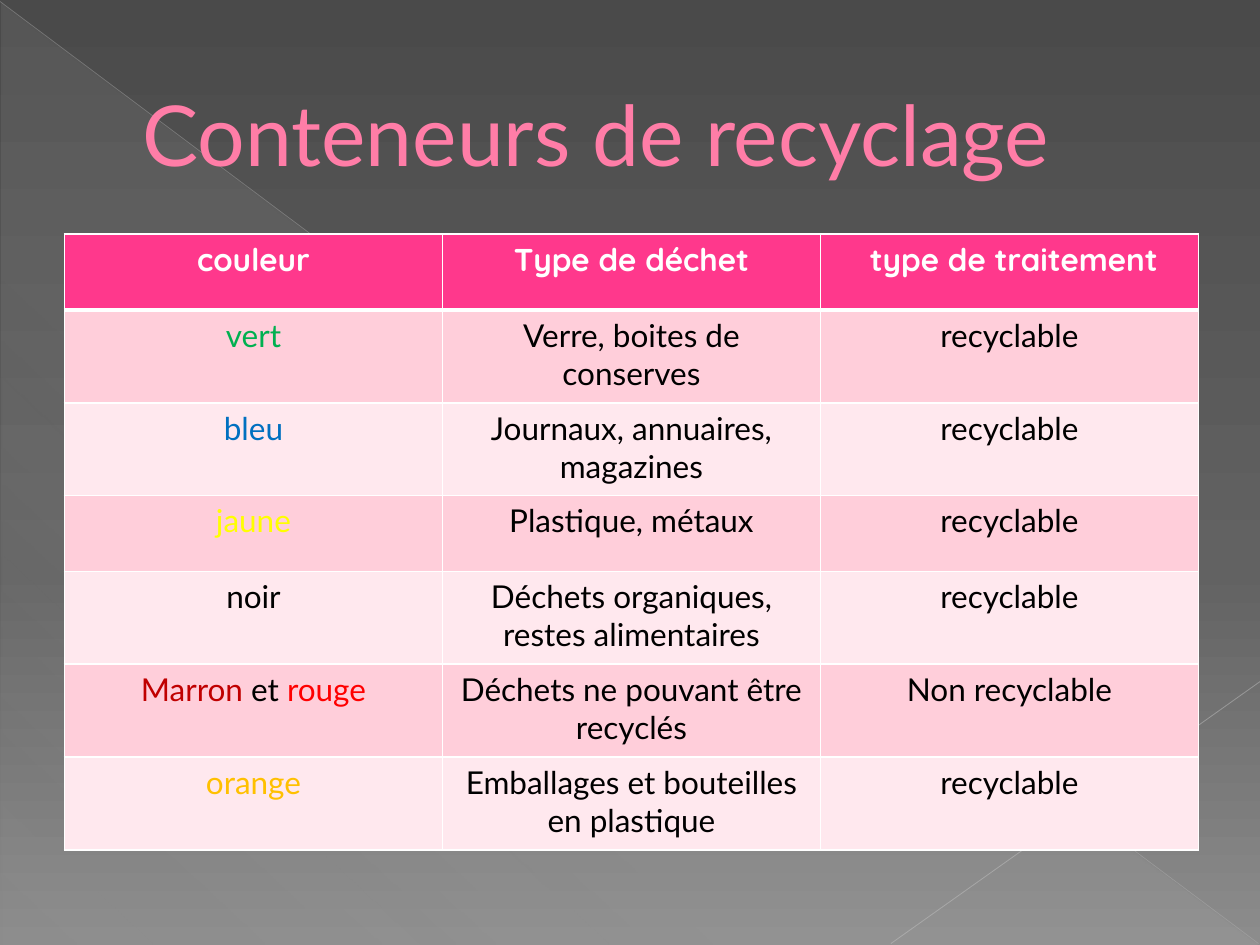
from dataclasses import dataclass

from lxml import etree
from pptx import Presentation
from pptx.dml.color import RGBColor
from pptx.enum import shapes, text
from pptx.oxml import parse_xml
from pptx.oxml.ns import nsdecls, qn
from pptx.util import Cm, Pt

COLORS = {
    "title": "FF7DA7", "title_edge": "B12761", "white": "FFFFFF",
    "black": "000000", "header": "FF388C", "band_dark": "FFCEDA",
    "band_light": "FFE8EE", "green": "00B050", "blue": "0070C0",
    "yellow": "FFFF00", "brown": "C00000", "red": "FF0000",
    "orange": "FFC000", "sky": "4A4A4A", "middle": "626262",
    "ground": "8C8C8C", "veil": "D2D2D2", "long_ray": "BFBFBF",
    "short_ray": "C6C6C6",
}


@dataclass
class Stop:
    position: int
    color: str
    opacity: int = 100


@dataclass
class Ray:
    start: tuple[float, float]
    end: tuple[float, float]
    color: str
    width: float
    opacity: int


@dataclass
class Part:
    words: str
    color: str = "black"


@dataclass
class Container:
    names: list[Part]
    waste: str
    treatment: str = "recyclable"
    height: float = 1.87


HEADINGS = ["couleur", "Type de déchet", " type de traitement"]
HEADER_HEIGHT = 1.53
CONTAINERS = [
    Container([Part("vert", "green")], "Verre, boites de conserves"),
    Container([Part("bleu", "blue")], "Journaux, annuaires, magazines"),
    Container([Part("jaune", "yellow")], "Plastique, métaux", height=1.53),
    Container([Part("noir")], "Déchets organiques, restes alimentaires"),
    Container([Part("Marron", "brown"), Part(" et "), Part("rouge", "red")],
              "Déchets ne pouvant être recyclés", "Non recyclable"),
    Container([Part("orange", "orange")], "Emballages et bouteilles en plastique"),
]
RAYS = [
    Ray((0, 0.03), (25.37, 19.02), "long_ray", 0.39, 35),
    Ray((25.4, 13.74), (17.96, 19.02), "short_ray", 0.47, 45),
]


def rgb(color: str) -> RGBColor:
    return RGBColor.from_string(COLORS[color])


def color_xml(color: str, opacity: int = 100) -> str:
    return f'<a:srgbClr val="{COLORS[color]}"><a:alpha val="{opacity * 1000}"/></a:srgbClr>'


def set_gradient(fill, stops: list[Stop], angle: int) -> None:
    """Fill with any number of stops, the angle running clockwise."""
    fill.gradient()
    stop_list = fill.gradient_stops[0]._gs.getparent()
    gradient = stop_list.getparent()
    marks = "".join(f'<a:gs pos="{s.position * 1000}">{color_xml(s.color, s.opacity)}</a:gs>'
                    for s in stops)
    gradient.replace(stop_list, parse_xml(f'<a:gsLst {nsdecls("a")}>{marks}</a:gsLst>'))
    gradient.find(qn("a:lin")).set("ang", str(angle * 60000))


def draw_ray(slide, ray: Ray) -> None:
    line = slide.shapes.add_connector(shapes.MSO_CONNECTOR.STRAIGHT,
                                      *map(Cm, ray.start + ray.end))
    line.line.width = Pt(ray.width)
    line.line.color.rgb = rgb(ray.color)
    tint = line.line._ln.find(".//" + qn("a:srgbClr"))
    etree.SubElement(tint, qn("a:alpha")).set("val", str(ray.opacity * 1000))
    etree.SubElement(line._element.spPr, qn("a:effectLst"))


def add_run(paragraph, part: Part, size: int, font: str, bold: bool = False):
    run = paragraph.add_run()
    run.text = part.words
    run.font.size = Pt(size)
    run.font.name = font
    run.font.bold = bold
    run.font.color.rgb = rgb(part.color)
    return run


def draw_cell(cell, parts: list[Part], fill: str, font: str = "Lato",
              bold: bool = False, top: int = 1, bottom: int = 1) -> None:
    properties = cell._tc.get_or_add_tcPr()
    for side, width in {"L": 1, "R": 1, "T": top, "B": bottom}.items():
        properties.append(parse_xml(
            f'<a:ln{side} {nsdecls("a")} w="{Pt(width)}"><a:solidFill>'
            f'{color_xml("white")}</a:solidFill></a:ln{side}>'))
    cell.fill.solid()
    cell.fill.fore_color.rgb = rgb(fill)
    paragraph = cell.text_frame.paragraphs[0]
    paragraph.alignment = text.PP_ALIGN.CENTER
    for part in parts:
        add_run(paragraph, part, 18, font, bold)


def draw_backdrop(slide) -> None:
    set_gradient(slide.background.fill,
                 [Stop(0, "sky"), Stop(60, "middle"), Stop(100, "ground")], 90)
    veil = slide.shapes.add_shape(shapes.MSO_SHAPE.RIGHT_TRIANGLE,
                                  Cm(0.03), Cm(0.05), Cm(25.35), Cm(19))
    veil.shadow.inherit = False
    veil.line.fill.background()
    set_gradient(veil.fill, [Stop(0, "veil", 10), Stop(70, "veil", 8),
                             Stop(100, "veil", 1)], 133)
    for ray in RAYS:
        draw_ray(slide, ray)


def draw_title(slide) -> None:
    title = slide.shapes.title
    title.left, title.top, title.width, title.height = map(Cm, (1.27, 0.74, 22.86, 3.89))
    slide.shapes._spTree.append(title._element)  # in front of the backdrop
    frame = title.text_frame
    frame.vertical_anchor = text.MSO_ANCHOR.MIDDLE
    frame.auto_size = text.MSO_AUTO_SIZE.NONE
    paragraph = frame.paragraphs[0]
    paragraph.alignment = text.PP_ALIGN.LEFT
    paragraph._p.get_or_add_pPr().set("marL", str(Cm(1.35)))
    run = add_run(paragraph, Part("Conteneurs de recyclage", "title"), 48, "Lato")
    run.font._element.insert(0, parse_xml(
        f'<a:ln {nsdecls("a")} w="{Pt(0.5)}"><a:solidFill>'
        f'{color_xml("title_edge")}</a:solidFill></a:ln>'))


def draw_table(slide) -> None:
    heights = [HEADER_HEIGHT] + [container.height for container in CONTAINERS]
    table = slide.shapes.add_table(len(heights), len(HEADINGS), Cm(1.3), Cm(4.72),
                                   Cm(22.86), Cm(sum(heights))).table
    for row, height in zip(table.rows, heights):
        row.height = Cm(height)
    for column, heading in enumerate(HEADINGS):
        draw_cell(table.cell(0, column), [Part(heading, "white")], "header",
                  "Quicksand", bold=True, bottom=3)
    for row, container in enumerate(CONTAINERS, start=1):
        band = "band_dark" if row % 2 else "band_light"
        contents = [container.names, [Part(container.waste)], [Part(container.treatment)]]
        for column, parts in enumerate(contents):
            draw_cell(table.cell(row, column), parts, band, top=3 if row == 1 else 1)


def main() -> None:
    deck = Presentation()
    deck.slide_width, deck.slide_height = Cm(25.4), Cm(19.05)
    slide = deck.slides.add_slide(deck.slide_layouts[5])
    draw_backdrop(slide)
    draw_title(slide)
    draw_table(slide)
    deck.save("out.pptx")


if __name__ == "__main__":
    main()
